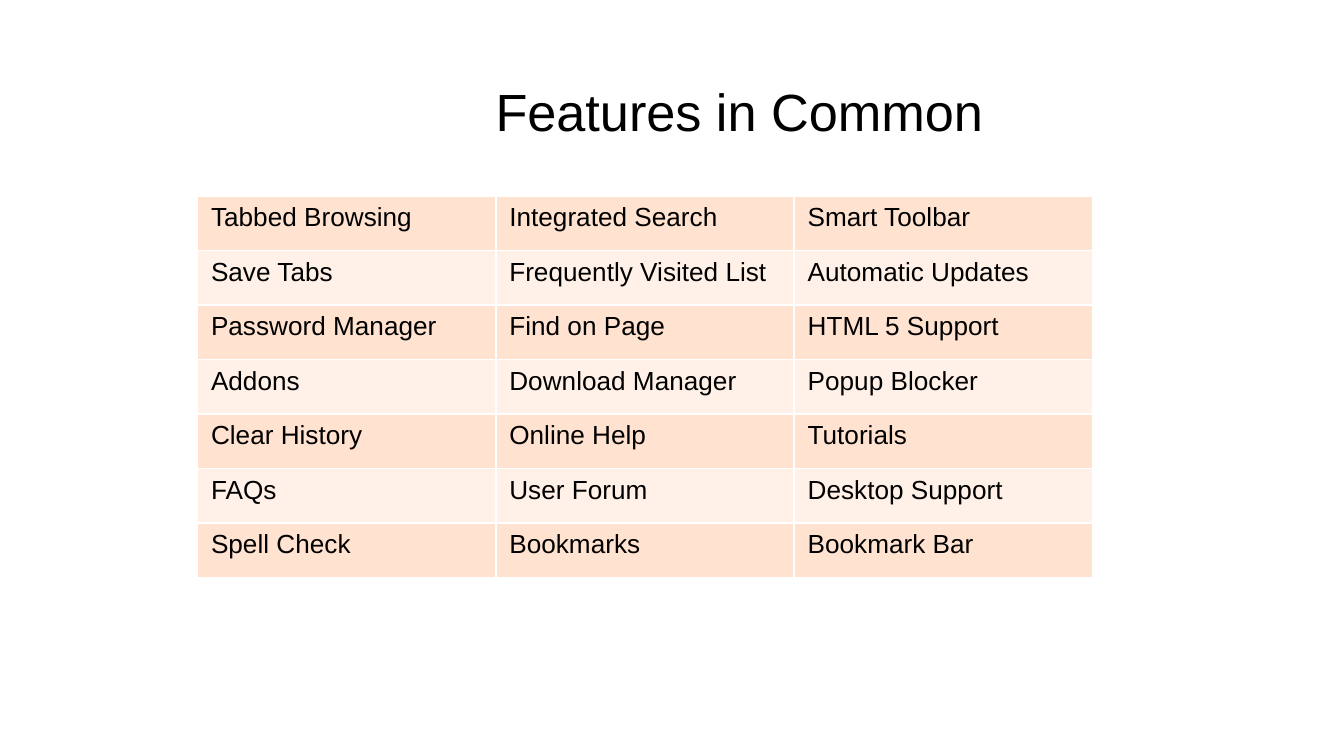
"""Build a slide with a table of the features that web browsers share."""
from lxml.etree import SubElement
from pptx import Presentation
from pptx.dml.color import RGBColor
from pptx.enum.text import MSO_ANCHOR, PP_ALIGN
from pptx.oxml.ns import qn
from pptx.util import Inches, Pt

BLACK = RGBColor(0x00, 0x00, 0x00)
WHITE = RGBColor(0xFF, 0xFF, 0xFF)
PEACH = RGBColor(0xFF, 0xE2, 0xCF)
PALE_PEACH = RGBColor(0xFF, 0xF1, 0xE8)

FEATURES = [
    ("Tabbed Browsing", "Integrated Search", "Smart Toolbar"),
    ("Save Tabs", "Frequently Visited List", "Automatic Updates"),
    ("Password Manager", "Find on Page", "HTML 5 Support"),
    ("Addons", "Download Manager", "Popup Blocker"),
    ("Clear History", "Online Help", "Tutorials"),
    ("FAQs", "User Forum", "Desktop Support"),
    ("Spell Check", "Bookmarks", "Bookmark Bar"),
]


def write_text(text_frame, text, size, align=PP_ALIGN.LEFT, color=BLACK, font="Arial"):
    paragraph = text_frame.paragraphs[0]
    paragraph.alignment = align
    run = paragraph.add_run()
    run.text = text
    run.font.name = font
    run.font.size = Pt(size)
    run.font.color.rgb = color


def set_borders(cell, color, width):
    properties = cell._tc.get_or_add_tcPr()
    for position, side in enumerate(("a:lnL", "a:lnR", "a:lnT", "a:lnB")):
        line = SubElement(properties, qn(side), w=str(Pt(width)))
        fill = SubElement(line, qn("a:solidFill"))
        SubElement(fill, qn("a:srgbClr"), val=str(color))
        properties.insert(position, line)


presentation = Presentation()
presentation.slide_width = Inches(10)
presentation.slide_height = Inches(10) * 9 // 16
slide = presentation.slides.add_slide(presentation.slide_layouts[5])
slide.background.fill.solid()
slide.background.fill.fore_color.rgb = WHITE

title = slide.shapes.title
title.left, title.top = Inches(0.34), Inches(0.49)
title.width, title.height = Inches(9.32), Inches(0.63)
title_frame = title.text_frame
title_frame.margin_left = Inches(1.1)
title_frame.margin_right = Inches(0.1)
title_frame.margin_top = Inches(0.13)
title_frame.margin_bottom = Inches(0.1)
title_frame.vertical_anchor = MSO_ANCHOR.MIDDLE
write_text(title_frame, "Features in Common", size=28, align=PP_ALIGN.CENTER)

table_shape = slide.shapes.add_table(
    len(FEATURES), len(FEATURES[0]),
    Inches(1.47), Inches(1.46), Inches(6.66), Inches(2.84),
)
table = table_shape.table
table.first_row = False
for row_index, row in enumerate(FEATURES):
    for column_index, feature in enumerate(row):
        cell = table.cell(row_index, column_index)
        cell.fill.solid()
        cell.fill.fore_color.rgb = PALE_PEACH if row_index % 2 else PEACH
        set_borders(cell, WHITE, width=1)
        write_text(cell.text_frame, feature, size=14)

presentation.save("out.pptx")
